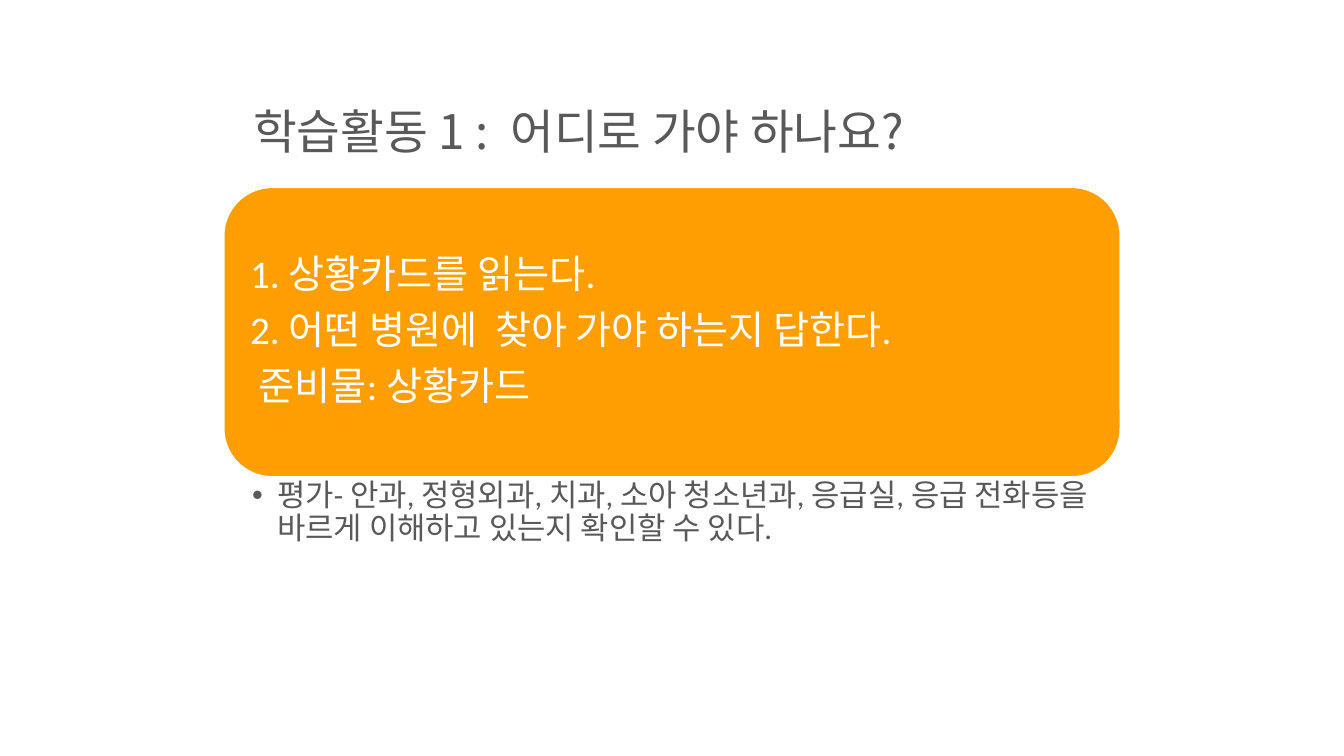
import pptx
import pptx.dml.color
import pptx.enum.shapes
import pptx.enum.text
import pptx.oxml.xmlchemy
import pptx.util
from lxml import etree

EMU_PER_PX = 9144  # 100 px to the inch
WHITE = pptx.dml.color.RGBColor(0xFF, 0xFF, 0xFF)
ORANGE = pptx.dml.color.RGBColor(0xFE, 0x9E, 0x00)
GREY = pptx.dml.color.RGBColor(0x59, 0x59, 0x59)
DRAWING = "{http://schemas.openxmlformats.org/drawingml/2006/main}"

TITLE = "학습활동 1 :  어디로 가야 하나요?"
STEPS = [
    "1. 상황카드를 읽는다.",
    "2. 어떤 병원에  찾아 가야 하는지 답한다.",
    " 준비물: 상황카드",
]
ASSESSMENT = [
    "평가- 안과, 정형외과, 치과, 소아 청소년과, 응급실, 응급 전화등을 바르게 이해하고 있는지 확인할 수 있다."
]


def px(length):
    return pptx.util.Emu(length * EMU_PER_PX)


def place(shape, left, top, width, height):
    shape.left, shape.top = px(left), px(top)
    shape.width, shape.height = px(width), px(height)


def add_bullet(paragraph, indent):
    """Give the paragraph a round bullet with a hanging indent in px."""
    properties = paragraph._p.get_or_add_pPr()
    properties.set("marL", str(px(indent)))
    properties.set("indent", str(px(-indent)))
    etree.SubElement(properties, DRAWING + "buChar", char="•")


def write_text(shape, lines, size, color, font="Calibri", anchor="TOP",
               insets=(10, 5, 10, 5), space_after=0, bullet_indent=None):
    """Fill the shape with one paragraph a line; insets are left, top, right, bottom."""
    frame = shape.text_frame
    frame.word_wrap = True
    frame.auto_size = pptx.enum.text.MSO_AUTO_SIZE.NONE
    frame.vertical_anchor = pptx.enum.text.MSO_ANCHOR[anchor]
    (frame.margin_left, frame.margin_top,
     frame.margin_right, frame.margin_bottom) = map(px, insets)
    for index, line in enumerate(lines):
        paragraph = frame.paragraphs[0] if index == 0 else frame.add_paragraph()
        if bullet_indent:
            add_bullet(paragraph, bullet_indent)
        paragraph.alignment = pptx.enum.text.PP_ALIGN.LEFT
        paragraph.line_spacing = 0.9
        paragraph.space_before = pptx.util.Pt(0)
        paragraph.space_after = pptx.util.Pt(space_after)
        run = paragraph.add_run()
        run.text = line
        run.font.name = font
        run.font.size = pptx.util.Pt(size)
        run.font.color.rgb = color


def add_panel(slide, left, top, width, height):
    panel = slide.shapes.add_shape(
        pptx.enum.shapes.MSO_SHAPE.ROUNDED_RECTANGLE,
        px(left), px(top), px(width), px(height))
    panel.shadow.inherit = False
    panel.fill.solid()
    panel.fill.fore_color.rgb = ORANGE
    panel.line.color.rgb = WHITE
    panel.line.width = pptx.util.Pt(1)
    return panel


def main():
    presentation = pptx.Presentation()
    presentation.slide_width, presentation.slide_height = px(1333), px(750)
    slide = presentation.slides.add_slide(presentation.slide_layouts[1])

    title = slide.shapes.title
    place(title, 241, 33, 1025, 131)
    write_text(title, [TITLE], 34, GREY, font="Noto Sans CJK KR", anchor="BOTTOM")

    panel = add_panel(slide, 222, 186, 889, 287)
    write_text(panel, STEPS, 28, WHITE, anchor="MIDDLE",
               insets=(12, 12, 12, 12), space_after=9.8)

    assessment = slide.placeholders[1]
    place(assessment, 222, 472, 889, 196)
    write_text(assessment, ASSESSMENT, 22, GREY, insets=(28, 4, 22, 4),
               space_after=4.4, bullet_indent=25)

    presentation.save("out.pptx")


if __name__ == "__main__":
    main()
